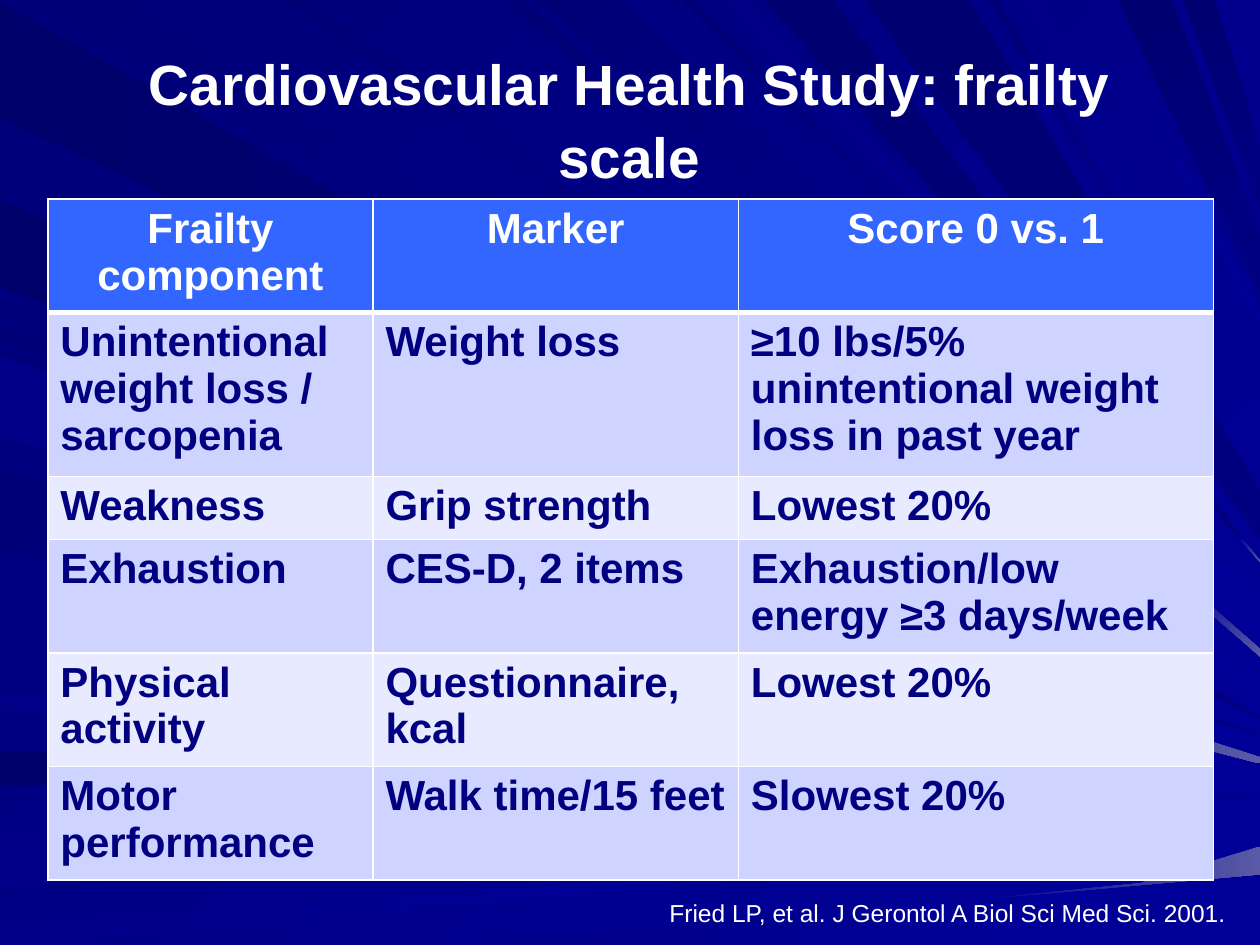
import pptx
import pptx.util
import pptx.dml.color
import pptx.enum.text
import pptx.oxml
import pptx.oxml.ns
from dataclasses import dataclass
from typing import NamedTuple

PX = 9144
WIDTH, HEIGHT = 1000, 750
ALIGN = pptx.enum.text.PP_ALIGN
ANCHOR = pptx.enum.text.MSO_ANCHOR


class Tone(NamedTuple):
    start: str
    end: str
    angle: int


@dataclass(frozen=True)
class Theme:
    font: str = "Arial"
    title_size: float = 32.4
    table_size: float = 24
    source_size: float = 14
    white: str = "FFFFFF"
    navy: str = "000080"
    header: str = "3366FF"
    glint: str = "5A5AA6"
    bands: tuple[str, str] = ("CED3FF", "E8EAFF")
    backdrop: Tone = Tone("000078", "000099", 45)
    night: Tone = Tone("00006B", "000080", 0)
    midnight: Tone = Tone("000070", "000080", 90)
    dusk: Tone = Tone("000076", "000099", 45)
    dawn: Tone = Tone("000088", "000099", 0)


THEME = Theme()


class Box(NamedTuple):
    left: int
    top: int
    width: int
    height: int


class Beam(NamedTuple):
    edge: str
    near: int
    far: int
    tip: int
    tone: Tone
    spread: int = 1
    joint: float = 1
    shines: bool = False


class Label(NamedTuple):
    text: str
    box: Box
    size: float
    bold: bool
    align: ALIGN
    anchor: ANCHOR
    spacing: float


BEAMS = (
    Beam("left", 93, 2, 569, THEME.night),
    Beam("top", 26, 101, 562, THEME.dusk),
    Beam("left", 623, 596, 631, THEME.night, joint=0.7),
    Beam("left", 704, 665, 643, THEME.dawn, 8, 0.83),
    Beam("left", 750, 735, 662, THEME.dawn, joint=0.63),
    Beam("bottom", 364, 742, 672, THEME.dawn, 22, 0.63, True),
    Beam("left", 270, 258, 589, THEME.dusk, joint=0.87),
    Beam("left", 228, 159, 584, THEME.night, joint=0.87),
    Beam("top", 398, 416, 515, THEME.dusk, 6, 0.9, True),
    Beam("top", 426, 492, 479, THEME.dusk, 28, 0.93),
    Beam("top", 540, 552, 463, THEME.dusk),
    Beam("top", 606, 661, 445, THEME.midnight, joint=0.96, shines=True),
    Beam("top", 887, 930, 183, THEME.midnight, 54, 0.76),
    Beam("top", 939, 964, 114, THEME.midnight, 53, 0.83),
    Beam("left", 342, 278, 596, THEME.dusk, 6),
    Beam("left", 437, 374, 605, THEME.dusk),
    Beam("left", 560, 552, 621, THEME.dawn, 2),
    Beam("top", 225, 247, 547, THEME.dusk, 5),
    Beam("top", 577, 588, 453, THEME.dawn),
    Beam("top", 686, 770, 390, THEME.midnight, 38),
    Beam("top", 785, 792, 354, THEME.dusk, 6),
    Beam("top", 815, 824, 335, THEME.dawn),
    Beam("top", 865, 872, 249, THEME.dawn, 9),
    Beam("left", 347, 283, 601, THEME.dawn, 5, 0.63, True),
)

TITLE = Label("Cardiovascular Health Study: frailty scale", Box(58, 30, 883, 125),
              THEME.title_size, True, ALIGN.CENTER, ANCHOR.MIDDLE, 1.07)
SOURCE = Label("Fried LP, et al. J Gerontol A Biol Sci Med Sci. 2001.", Box(308, 708, 675, 34),
               THEME.source_size, False, ALIGN.RIGHT, ANCHOR.TOP, 1.0)

TABLE_BOX = Box(38, 158, 925, 540)
COLUMN_WIDTHS = (258, 290, 377)
ROW_HEIGHTS = (90, 130, 50, 90, 90, 90)
SCALE_ROWS = (
    ("Frailty component", "Marker", "Score 0 vs. 1"),
    ("Unintentional weight loss / sarcopenia", "Weight loss",
     "≥10 lbs/5% unintentional weight loss in past year"),
    ("Weakness", "Grip strength", "Lowest 20%"),
    ("Exhaustion", "CES-D, 2 items", "Exhaustion/low energy ≥3 days/week"),
    ("Physical activity", "Questionnaire, kcal", "Lowest 20%"),
    ("Motor performance", "Walk time/15 feet", "Slowest 20%"),
)


def rgb(color: str) -> pptx.dml.color.RGBColor:
    return pptx.dml.color.RGBColor.from_string(color)


def to_emu(box: Box) -> list[int]:
    return [length * PX for length in box]


def paint(fill, tone: Tone) -> None:
    if tone.start == tone.end:
        fill.solid()
        fill.fore_color.rgb = rgb(tone.start)
        return
    fill.gradient()
    fill.gradient_angle = (360 - tone.angle) % 360
    for stop, color in zip(fill.gradient_stops, (tone.start, tone.end)):
        stop.color.rgb = rgb(color)


def style(paragraph, size: float, bold: bool, color: str, align: ALIGN) -> None:
    paragraph.alignment = align
    paragraph.font.name = THEME.font
    paragraph.font.size = pptx.util.Pt(size)
    paragraph.font.bold = bold
    paragraph.font.color.rgb = rgb(color)


def edge_point(edge: str, offset: int) -> tuple[int, int]:
    return {"left": (0, offset), "top": (offset, 0), "bottom": (offset, HEIGHT)}[edge]


def along(start: tuple[int, int], end: tuple[int, int], share: float) -> tuple[int, int]:
    return tuple(round(a + (b - a) * share) for a, b in zip(start, end))


def draw_outline(page, points: list[tuple[int, int]], tone: Tone) -> None:
    builder = page.shapes.build_freeform(*points[0], scale=PX)
    builder.add_line_segments(points[1:], close=True)
    shape = builder.convert_to_shape()
    shape.shadow.inherit = False
    shape.line.fill.background()
    paint(shape.fill, tone)


def draw_beam(page, beam: Beam) -> None:
    lower = edge_point(beam.edge, beam.near), (WIDTH, beam.tip + beam.spread)
    upper = edge_point(beam.edge, beam.far), (WIDTH, beam.tip)
    joints = along(*lower, beam.joint), along(*upper, beam.joint)
    draw_outline(page, [lower[0], joints[0], joints[1], upper[0]], beam.tone)
    if beam.joint < 1:
        end = THEME.glint if beam.shines else beam.tone.end
        tail = Tone(THEME.backdrop.end if beam.shines else end, end, beam.tone.angle)
        draw_outline(page, [joints[0], lower[1], upper[1], joints[1]], tail)


def draw_label(page, label: Label) -> None:
    frame = page.shapes.add_textbox(*to_emu(label.box)).text_frame
    frame.word_wrap = True
    frame.vertical_anchor = label.anchor
    paragraph = frame.paragraphs[0]
    paragraph.text = label.text
    paragraph.line_spacing = label.spacing
    style(paragraph, label.size, label.bold, THEME.white, label.align)


def set_borders(cell, bottom: int) -> None:
    properties = cell._tc.get_or_add_tcPr()
    widths = {"lnL": 1, "lnR": 1, "lnT": 1, "lnB": bottom}
    for position, (side, points) in enumerate(widths.items()):
        properties.insert(position, pptx.oxml.parse_xml(
            f'<a:{side} {pptx.oxml.ns.nsdecls("a")} w="{pptx.util.Pt(points)}">'
            f'<a:solidFill><a:srgbClr val="{THEME.white}"/></a:solidFill></a:{side}>'))


def draw_table(page) -> None:
    table = page.shapes.add_table(len(SCALE_ROWS), len(COLUMN_WIDTHS), *to_emu(TABLE_BOX)).table
    for column, width in zip(table.columns, COLUMN_WIDTHS):
        column.width = width * PX
    for index, (row, height, texts) in enumerate(zip(table.rows, ROW_HEIGHTS, SCALE_ROWS)):
        row.height = height * PX
        heading = index == 0
        fill = THEME.header if heading else THEME.bands[(index - 1) % 2]
        for cell, text in zip(row.cells, texts):
            paragraph = cell.text_frame.paragraphs[0]
            paragraph.text = text
            style(paragraph, THEME.table_size, True, THEME.white if heading else THEME.navy,
                  ALIGN.CENTER if heading else ALIGN.LEFT)
            paint(cell.fill, Tone(fill, fill, 0))
            set_borders(cell, 3 if heading else 1)


def main() -> None:
    deck = pptx.Presentation()
    deck.slide_width, deck.slide_height = WIDTH * PX, HEIGHT * PX
    page = deck.slides.add_slide(deck.slide_layouts[6])
    paint(page.background.fill, THEME.backdrop)
    for beam in BEAMS:
        draw_beam(page, beam)
    draw_label(page, TITLE)
    draw_table(page)
    draw_label(page, SOURCE)
    deck.save("out.pptx")


if __name__ == "__main__":
    main()
